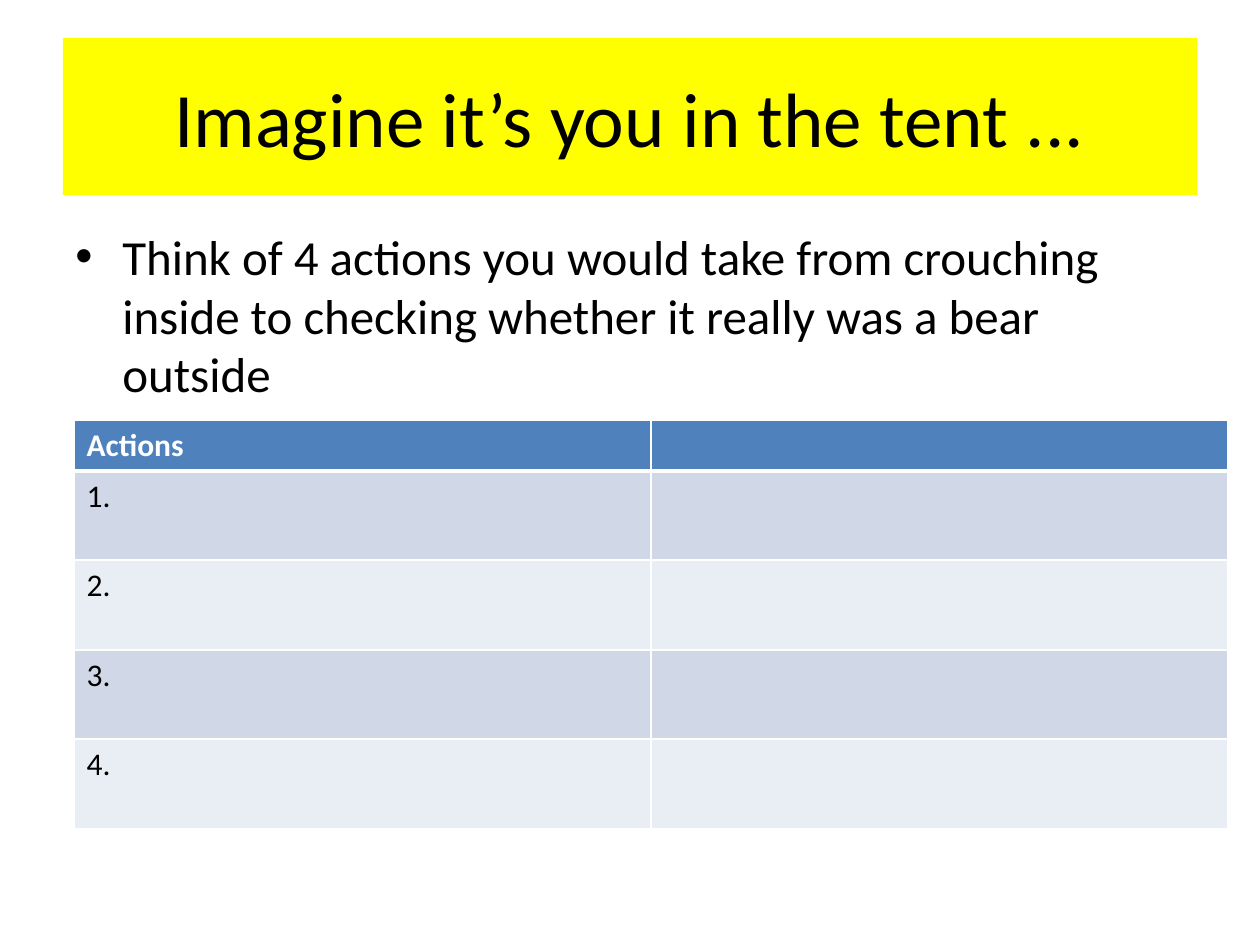
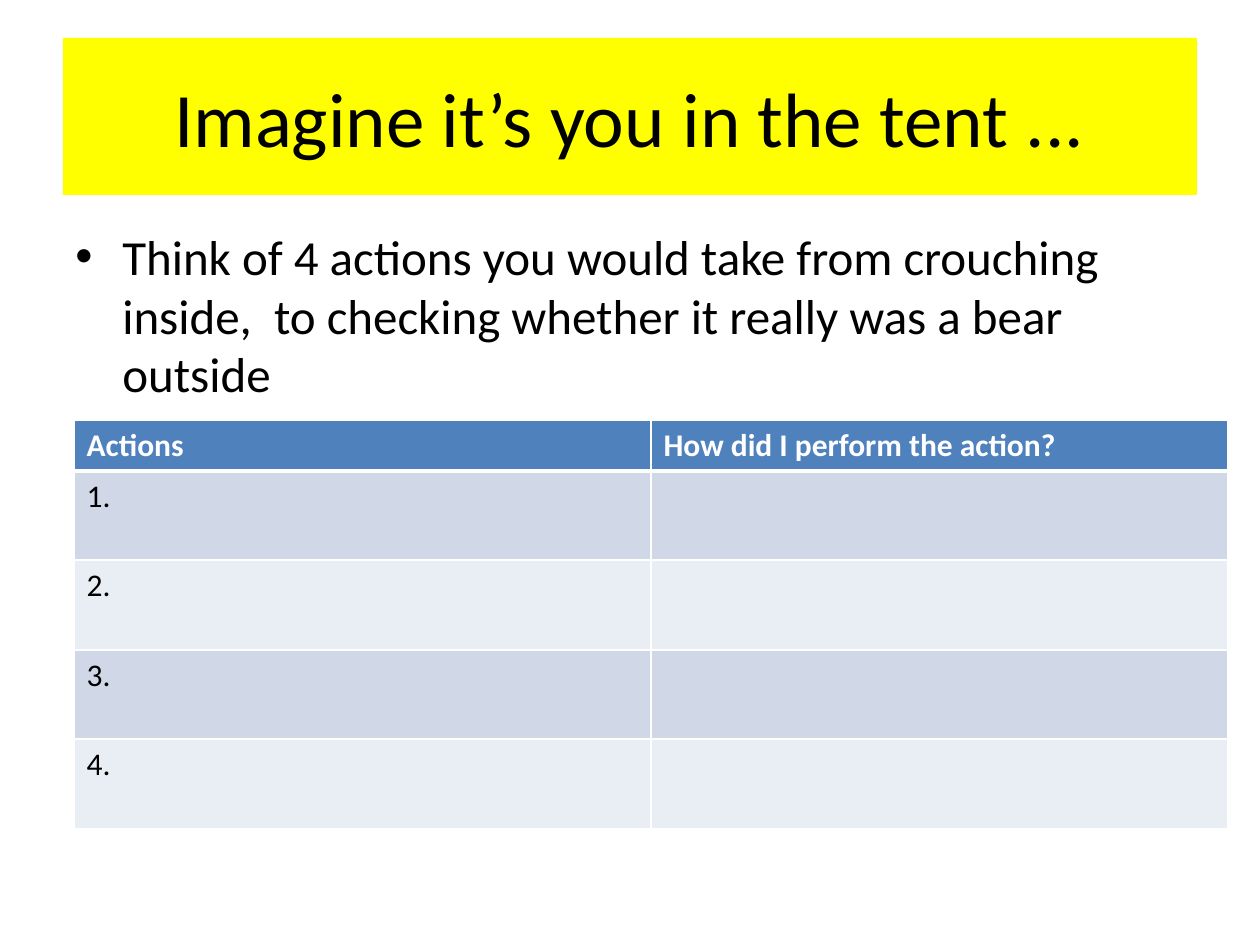
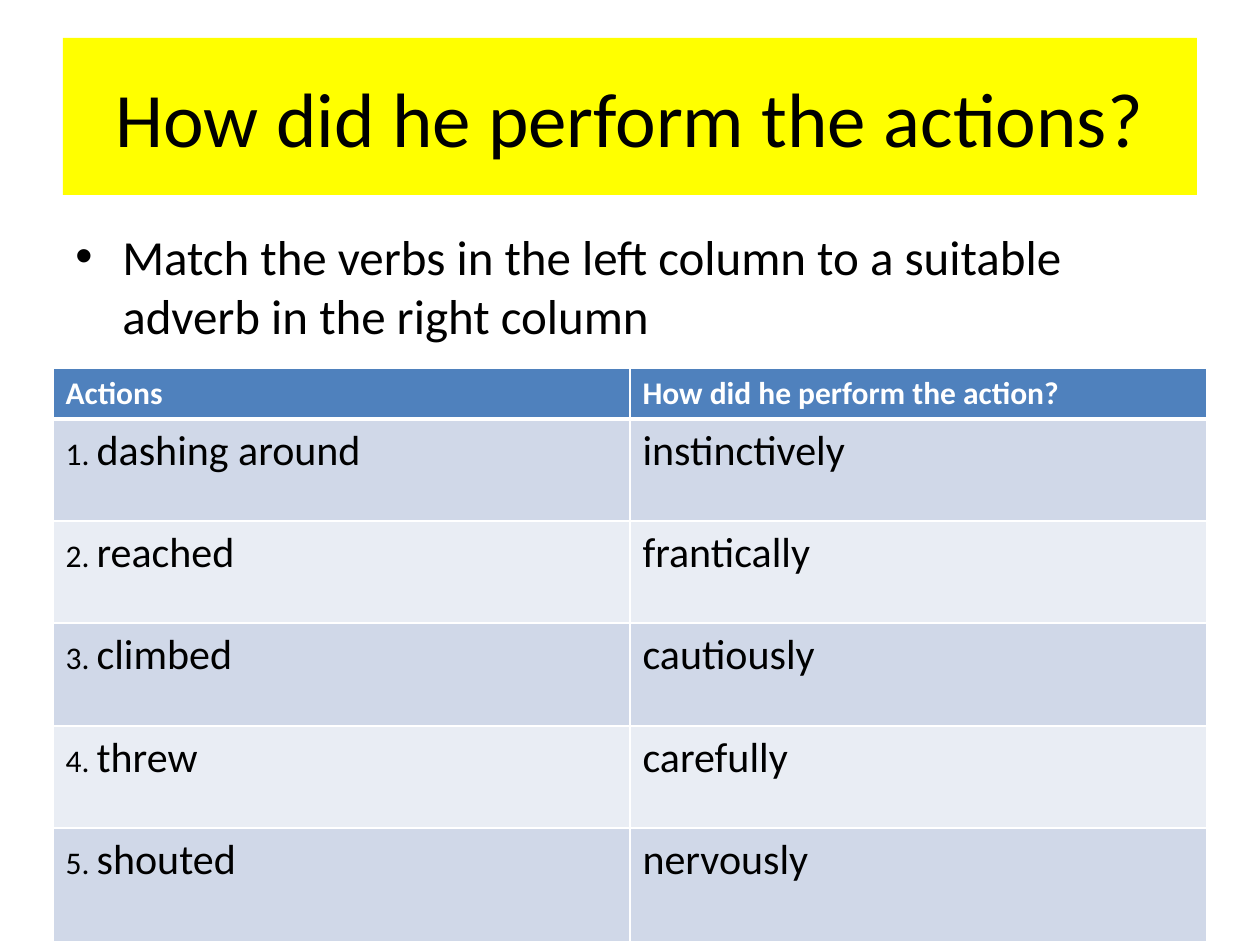
import lxml.etree
import pptx
import pptx.dml.color
import pptx.enum.shapes
import pptx.enum.text
import pptx.oxml.ns
import pptx.util

PX = 914400 / 126
FONT = "Calibri"
COLORS = {
    "band": "FFFF00",
    "header": "4F81BD",
    "odd_row": "D0D8E8",
    "even_row": "E9EDF4",
    "text": "000000",
    "white": "FFFFFF",
}
TITLE_BOX = (63, 38, 1134, 157)
TASK_BOX = (63, 220, 1134, 624)
ACTION_ROWS = (51, 89, 90, 89, 90)
MATCH_ROWS = (51, 102, 102, 103, 102, 114)
NUMBERS = [[[(f"{n}.", 18)], []] for n in range(1, 5)]
PAIRS = [
    ("dashing around", "instinctively"),
    ("reached", "frantically"),
    ("climbed", "cautiously"),
    ("threw", "carefully"),
    ("shouted", "nervously"),
]
MATCHES = [
    [[(f"{n}. ", 18), (verb, 24)], [(adverb, 24)]]
    for n, (verb, adverb) in enumerate(PAIRS, 1)
]
SLIDES = [
    ("Imagine it’s you in the tent ...",
     "Think of 4 actions you would take from crouching inside to checking "
     "whether it really was a bear outside",
     (74, 420, 1154), ACTION_ROWS, ("Actions", ""), NUMBERS),
    ("Imagine it’s you in the tent ...",
     "Think of 4 actions you would take from crouching inside,  to checking "
     "whether it really was a bear outside",
     (74, 420, 1154), ACTION_ROWS,
     ("Actions", "How did I perform the action?"), NUMBERS),
    ("How did he perform the actions?",
     "Match the verbs in the left column to a suitable adverb in the right column",
     (53, 368, 1154), MATCH_ROWS,
     ("Actions", "How did he perform the action?"), MATCHES),
]


def emu(*lengths):
    """Turn px lengths into EMU."""
    return [pptx.util.Emu(round(length * PX)) for length in lengths]


def rgb(name):
    """Look up a named colour."""
    return pptx.dml.color.RGBColor.from_string(COLORS[name])


def add_run(p, text, size, color="text", bold=False):
    """Add one styled run to a paragraph."""
    r = p.add_run()
    r.text = text
    r.font.name = FONT
    r.font.size = pptx.util.Pt(size)
    r.font.bold = bold
    r.font.color.rgb = rgb(color)


def add_title(s, box, text):
    """Draw the title band with its centred text."""
    sp = s.shapes.add_shape(pptx.enum.shapes.MSO_SHAPE.RECTANGLE, *emu(*box))
    sp.shadow.inherit = False
    sp.fill.solid()
    sp.fill.fore_color.rgb = rgb("band")
    sp.line.fill.background()
    tf = sp.text_frame
    tf.word_wrap = True
    tf.vertical_anchor = pptx.enum.text.MSO_ANCHOR.MIDDLE
    p = tf.paragraphs[0]
    p.alignment = pptx.enum.text.PP_ALIGN.CENTER
    add_run(p, text, 44)


def add_task(s, box, text):
    """Write the bulleted task below the title."""
    tf = s.shapes.add_textbox(*emu(*box)).text_frame
    tf.word_wrap = True
    p = tf.paragraphs[0]
    p.space_before = pptx.util.Pt(5.6)
    pPr = p._p.get_or_add_pPr()
    indent = emu(47)[0]
    pPr.set("marL", str(indent))
    pPr.set("indent", str(-indent))
    qn = pptx.oxml.ns.qn
    lxml.etree.SubElement(pPr, qn("a:buFont"), typeface="Arial")
    lxml.etree.SubElement(pPr, qn("a:buChar"), char="•")
    add_run(p, text, 28)


def style_cell(cell, fill, bottom):
    """Give a cell white borders and a fill."""
    qn = pptx.oxml.ns.qn
    tcPr = cell._tc.get_or_add_tcPr()
    for side, width in (("L", 1), ("R", 1), ("T", 1), ("B", bottom)):
        ln = lxml.etree.SubElement(
            tcPr, qn(f"a:ln{side}"), w=str(pptx.util.Pt(width)))
        solid = lxml.etree.SubElement(ln, qn("a:solidFill"))
        lxml.etree.SubElement(solid, qn("a:srgbClr"), val=COLORS["white"])
    cell.fill.solid()
    cell.fill.fore_color.rgb = rgb(fill)


def add_actions(s, place, heights, header, rows):
    """Build the two-column table of actions."""
    left, top, width = place
    box = emu(left, top, width, sum(heights))
    table = s.shapes.add_table(len(heights), len(header), *box).table
    for row, height in zip(table.rows, emu(*heights)):
        row.height = height
    for c, text in enumerate(header):
        cell = table.cell(0, c)
        style_cell(cell, "header", 3)
        if text:
            add_run(cell.text_frame.paragraphs[0], text, 18, "white", True)
    for i, row in enumerate(rows, 1):
        for c, runs in enumerate(row):
            cell = table.cell(i, c)
            style_cell(cell, "odd_row" if i % 2 else "even_row", 1)
            for text, size in runs:
                add_run(cell.text_frame.paragraphs[0], text, size)


def main():
    """Build and save the presentation."""
    prs = pptx.Presentation()
    prs.slide_width, prs.slide_height = emu(1260, 945)
    for title, task, place, heights, header, rows in SLIDES:
        s = prs.slides.add_slide(prs.slide_layouts[6])
        add_title(s, TITLE_BOX, title)
        add_task(s, TASK_BOX, task)
        add_actions(s, place, heights, header, rows)
    prs.save("out.pptx")


if __name__ == "__main__":
    main()
